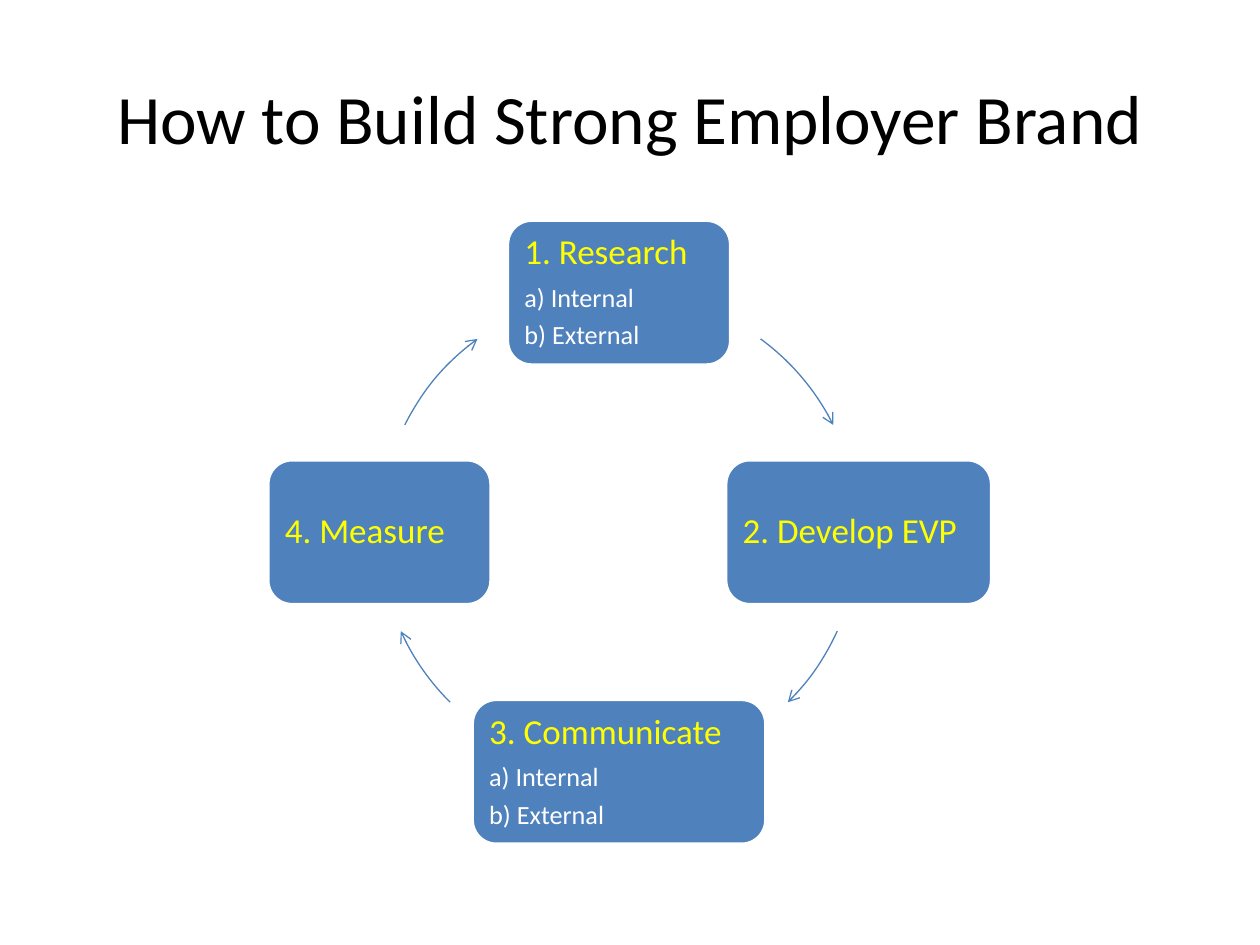
"""Build the employer brand slide: four steps around a ring."""
from dataclasses import dataclass
from math import cos, radians, sin
from typing import Any

from lxml import etree
from pptx import Presentation
from pptx import util as u
from pptx.dml import color
from pptx.enum import shapes, text


@dataclass(frozen=True)
class Theme:
    """Colours, font and type sizes."""
    font: str = "Calibri"
    ink: str = "000000"
    blue: str = "4F81BD"
    white: str = "FFFFFF"
    gold: str = "FFFF00"
    title: float = 39.6
    head: float = 20
    item: float = 15


@dataclass(frozen=True)
class Step:
    """A box on the ring and the arc that leaves it, in degrees and cm."""
    head: str
    angle: int
    width: float
    start: float
    end: float
    items: tuple[str, ...] = ()


THEME = Theme()
MID_X, MID_Y, RADIUS, HEIGHT = 12.48, 10.73, 4.83, 2.92
PARTS = ("a) Internal", "b) External")
STEPS = (
    Step("1. Research", 270, 4.5, 306.2, 333.4, PARTS),
    Step("2. Develop EVP", 0, 5.36, 24.4, 45.2),
    Step("3. Communicate", 90, 5.92, 134.8, 155.6, PARTS),
    Step("4. Measure", 180, 4.5, 206.6, 233.8),
)


def apply(obj: Any, form: dict[str, Any]) -> None:
    """Set each attribute named in the dict."""
    for name, value in form.items():
        setattr(obj, name, value)


def rgb(code: str) -> color.RGBColor:
    """Turn a hex code into a colour."""
    return color.RGBColor.from_string(code)


def frame(shape: Any, inset: float) -> Any:
    """Prepare a wrapped, middle-anchored text frame."""
    body = shape.text_frame
    sides = ("left", "right", "top", "bottom")
    apply(body, {"word_wrap": True, "vertical_anchor": text.MSO_ANCHOR.MIDDLE,
                 **{f"margin_{side}": u.Cm(inset) for side in sides}})
    return body


def write(para: Any, words: str, size: float, tint: str, form: dict[str, Any]) -> None:
    """Fill one paragraph with a styled run."""
    apply(para, form)
    run = para.add_run()
    run.text = words
    apply(run.font, {"name": THEME.font, "size": u.Pt(size)})
    run.font.color.rgb = rgb(tint)


def stroke(shape: Any, tint: str, width: float) -> None:
    """Style the outline and drop the shadow."""
    shape.shadow.inherit = False
    shape.line.color.rgb = rgb(tint)
    shape.line.width = u.Pt(width)


def title(slide: Any, words: str) -> None:
    """Draw the slide heading."""
    box = slide.shapes.add_textbox(u.Cm(1.27), u.Cm(0.76), u.Cm(22.86), u.Cm(3.18))
    para = frame(box, 0.25).paragraphs[0]
    write(para, words, THEME.title, THEME.ink, {"alignment": text.PP_ALIGN.CENTER})


def card(slide: Any, step: Step) -> None:
    """Draw a step box centred on the ring."""
    turn = radians(step.angle)
    left = MID_X + RADIUS * cos(turn) - step.width / 2
    top = MID_Y + RADIUS * sin(turn) - HEIGHT / 2
    box = slide.shapes.add_shape(shapes.MSO_SHAPE.ROUNDED_RECTANGLE, u.Cm(left),
                                 u.Cm(top), u.Cm(step.width), u.Cm(HEIGHT))
    box.fill.solid()
    box.fill.fore_color.rgb = rgb(THEME.blue)
    stroke(box, THEME.white, 2)
    body = frame(box, 0.2)
    rows = [(step.head, THEME.head, THEME.gold)]
    rows += [(item, THEME.item, THEME.white) for item in step.items]
    for i, (words, size, tint) in enumerate(rows):
        para = body.add_paragraph() if i else body.paragraphs[0]
        write(para, words, size, tint, {"alignment": text.PP_ALIGN.LEFT, "line_spacing": 0.9,
                                        "space_after": u.Pt(0.35 * size)})


def arc(slide: Any, step: Step) -> None:
    """Draw the arrowed arc to the next step."""
    side = u.Cm(2 * RADIUS)
    curve = slide.shapes.add_shape(shapes.MSO_SHAPE.ARC, u.Cm(MID_X - RADIUS),
                                   u.Cm(MID_Y - RADIUS), side, side)
    for i, turn in enumerate((step.start, step.end)):
        curve.adjustments[i] = turn * 0.6
    curve.fill.background()
    stroke(curve, THEME.blue, 0.75)
    line = curve.line._get_or_add_ln()
    etree.SubElement(line, line.tag.replace("}ln", "}tailEnd"), type="arrow")


def main() -> None:
    """Build and save the slide."""
    deck = Presentation()
    apply(deck, {"slide_width": u.Cm(25.4), "slide_height": u.Cm(19.05)})
    slide = deck.slides.add_slide(deck.slide_layouts[6])
    title(slide, "How to Build Strong Employer Brand")
    for step in STEPS:
        card(slide, step)
        arc(slide, step)
    deck.save("out.pptx")


if __name__ == "__main__":
    main()
